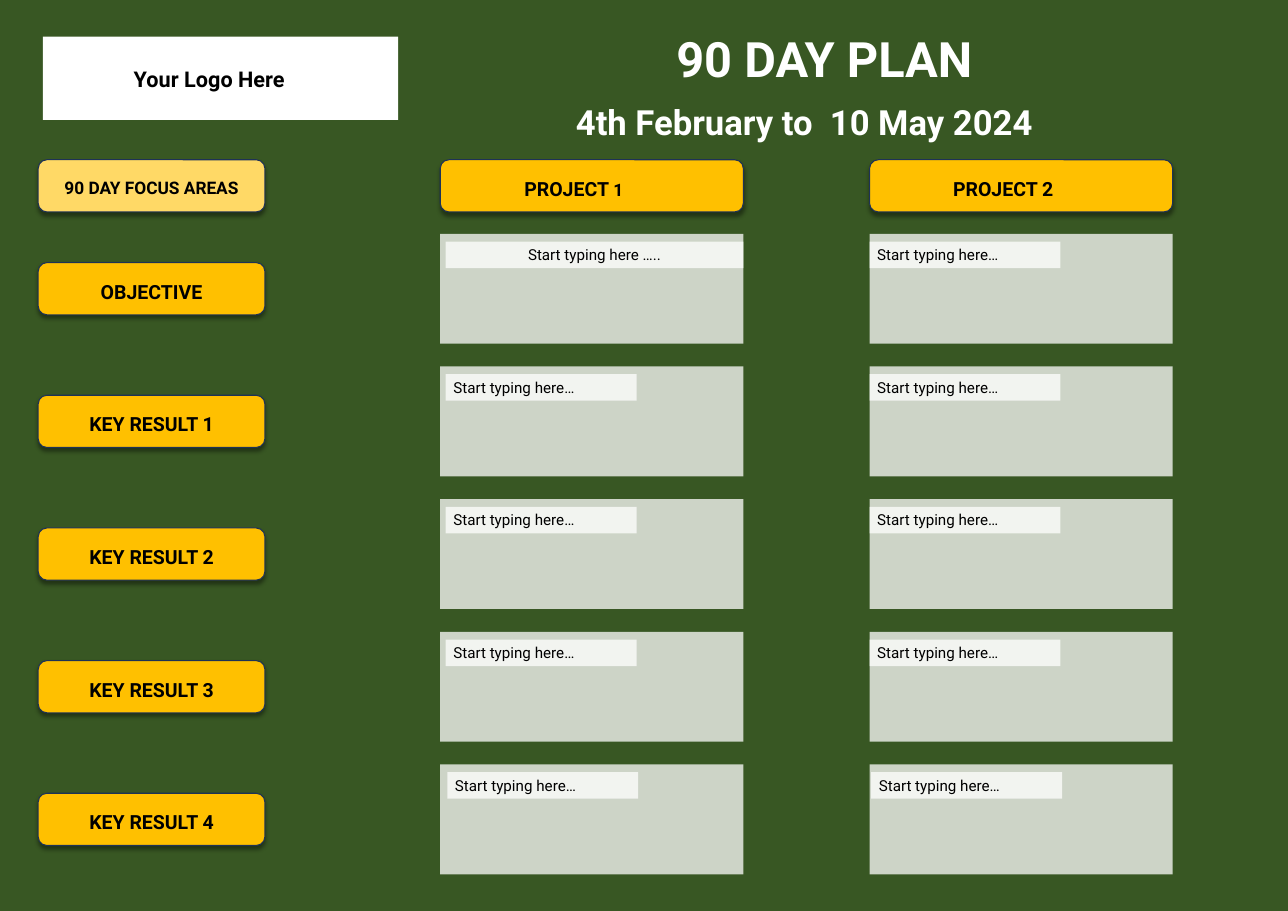
"""Build a 90 day plan slide with focus areas and two project columns."""
from dataclasses import dataclass

from lxml.etree import SubElement
from pptx import Presentation
from pptx.dml.color import RGBColor
from pptx.enum.shapes import MSO_SHAPE
from pptx.enum.text import MSO_ANCHOR, MSO_AUTO_SIZE, PP_ALIGN
from pptx.oxml.ns import qn
from pptx.util import Inches, Pt

PROMPT = "Start typing here…"
TITLE = "90 DAY PLAN"
PERIOD = "4th February to  10 May 2024"
LOGO_NOTE = "Your Logo Here"
FOCUS_HEADING = "90 DAY FOCUS AREAS"
FOCUS_AREAS = ["OBJECTIVE", "KEY RESULT 1", "KEY RESULT 2", "KEY RESULT 3", "KEY RESULT 4"]
PROJECTS = [
    {"heading": [("PROJECT", 18), (" 1", 16)], "left": 5.65, "entry_inset": 0.07,
     "entries": ["Start typing here ….."] + [PROMPT] * 4},
    {"heading": [("PROJECT 2", 18)], "left": 11.16, "entry_inset": 0,
     "entries": [PROMPT] * 5},
]


@dataclass(frozen=True)
class Theme:
    """Colours, font and type sizes of the plan."""
    font: str = "Roboto"
    background: str = "385723"
    white: str = "FFFFFF"
    ink: str = "000000"
    outline: str = "1E3256"
    gold: str = "FFC000"
    pale_gold: str = "FFD966"
    title: int = 45
    period: int = 32
    logo: int = 20
    label: int = 18
    focus: int = 16
    entry: int = 14


THEME = Theme()
FOCUS_LEFT, FOCUS_WIDTH = 0.49, 2.91
PROJECT_WIDTH, PANEL_HEIGHT = 3.89, 1.41
HEADING_TOP, BUTTON_HEIGHT, LABEL_DROP = 2.05, 0.67, 0.17
ROW_TOP, LAST_ROW_TOP = 3, 9.81
ROW_PITCH = (LAST_ROW_TOP - ROW_TOP) / (len(FOCUS_AREAS) - 1)
BUTTON_DROP, ENTRY_DROP = 0.37, 0.1
ENTRY_WIDTH, ENTRY_HEIGHT = 2.45, 0.34
LAST_ENTRY_SHIFT = 0.02


def write(holder, text, size=THEME.label, color=THEME.ink, bold=True,
          align=PP_ALIGN.CENTER, wrap=True):
    """Put text, or a list of (text, size) runs, into a shape."""
    frame = holder.text_frame
    frame.word_wrap = wrap
    frame.auto_size = MSO_AUTO_SIZE.SHAPE_TO_FIT_TEXT
    paragraph = frame.paragraphs[0]
    paragraph.alignment = align
    for words, points in [(text, size)] if isinstance(text, str) else text:
        run = paragraph.add_run()
        run.text = words
        run.font.name = THEME.font
        run.font.size = Pt(points)
        run.font.bold = bold
        run.font.color.rgb = RGBColor.from_string(color)


def add_label(slide, box, text, **style):
    write(slide.shapes.add_textbox(*map(Inches, box)), text, **style)


def add_block(slide, box, fill, kind=MSO_SHAPE.RECTANGLE, opacity=100):
    block = slide.shapes.add_shape(kind, *map(Inches, box))
    block.shadow.inherit = False
    block.fill.solid()
    block.fill.fore_color.rgb = RGBColor.from_string(fill)
    block.line.fill.background()
    if opacity < 100:
        color = block._element.spPr.find(qn("a:solidFill")).find(qn("a:srgbClr"))
        SubElement(color, qn("a:alpha"), val=str(opacity * 1000))
    return block


def add_button(slide, left, top, width, fill=THEME.gold):
    button = add_block(slide, (left, top, width, BUTTON_HEIGHT), fill, MSO_SHAPE.ROUNDED_RECTANGLE)
    button.line.color.rgb = RGBColor.from_string(THEME.outline)
    button.line.width = Pt(1)
    effects = button._element.spPr.find(qn("a:effectLst"))
    shadow = SubElement(effects, qn("a:outerShdw"), blurRad=str(Pt(4)), dist=str(Pt(3)),
                        dir="5400000", algn="t", rotWithShape="0")
    color = SubElement(shadow, qn("a:srgbClr"), val=THEME.ink)
    SubElement(color, qn("a:alpha"), val="40000")


def add_focus(slide, top, text, fill=THEME.gold, size=THEME.label):
    add_button(slide, FOCUS_LEFT, top, FOCUS_WIDTH, fill)
    add_label(slide, (FOCUS_LEFT, top + LABEL_DROP, FOCUS_WIDTH, 0.4), text, size=size, wrap=False)


def add_project(slide, project, row_tops):
    left = project["left"]
    add_button(slide, left, HEADING_TOP, PROJECT_WIDTH)
    add_label(slide, (left + 0.65, HEADING_TOP + LABEL_DROP, 2.13, 0.4), project["heading"])
    for top, entry in zip(row_tops, project["entries"]):
        add_block(slide, (left, top, PROJECT_WIDTH, PANEL_HEIGHT), THEME.white, opacity=75)
        inset = project["entry_inset"] + (LAST_ENTRY_SHIFT if top == row_tops[-1] else 0)
        is_wide = entry != PROMPT
        width = PROJECT_WIDTH - inset if is_wide else ENTRY_WIDTH
        bar = add_block(slide, (left + inset, top + ENTRY_DROP, width, ENTRY_HEIGHT),
                        THEME.white, opacity=75)
        bar.text_frame.vertical_anchor = MSO_ANCHOR.TOP
        write(bar, entry, size=THEME.entry, bold=False,
              align=PP_ALIGN.CENTER if is_wide else PP_ALIGN.LEFT)


def main():
    deck = Presentation()
    deck.slide_width, deck.slide_height = Inches(16.53), Inches(11.69)
    slide = deck.slides.add_slide(deck.slide_layouts[6])
    slide.background.fill.solid()
    slide.background.fill.fore_color.rgb = RGBColor.from_string(THEME.background)

    add_label(slide, (8.24, 0.32, 4.68, 0.86), TITLE, size=THEME.title, color=THEME.white)
    add_label(slide, (6.39, 1.25, 7.87, 0.64), PERIOD, size=THEME.period, color=THEME.white)
    add_block(slide, (0.55, 0.47, 4.56, 1.07), THEME.white)
    add_label(slide, (1.54, 0.79, 2.29, 0.44), LOGO_NOTE, size=THEME.logo, wrap=False)

    row_tops = [ROW_TOP + ROW_PITCH * row for row in range(len(FOCUS_AREAS))]
    add_focus(slide, HEADING_TOP, FOCUS_HEADING, fill=THEME.pale_gold, size=THEME.focus)
    for top, area in zip(row_tops, FOCUS_AREAS):
        add_focus(slide, top + BUTTON_DROP, area)
    for project in PROJECTS:
        add_project(slide, project, row_tops)
    deck.save("out.pptx")


if __name__ == "__main__":
    main()
